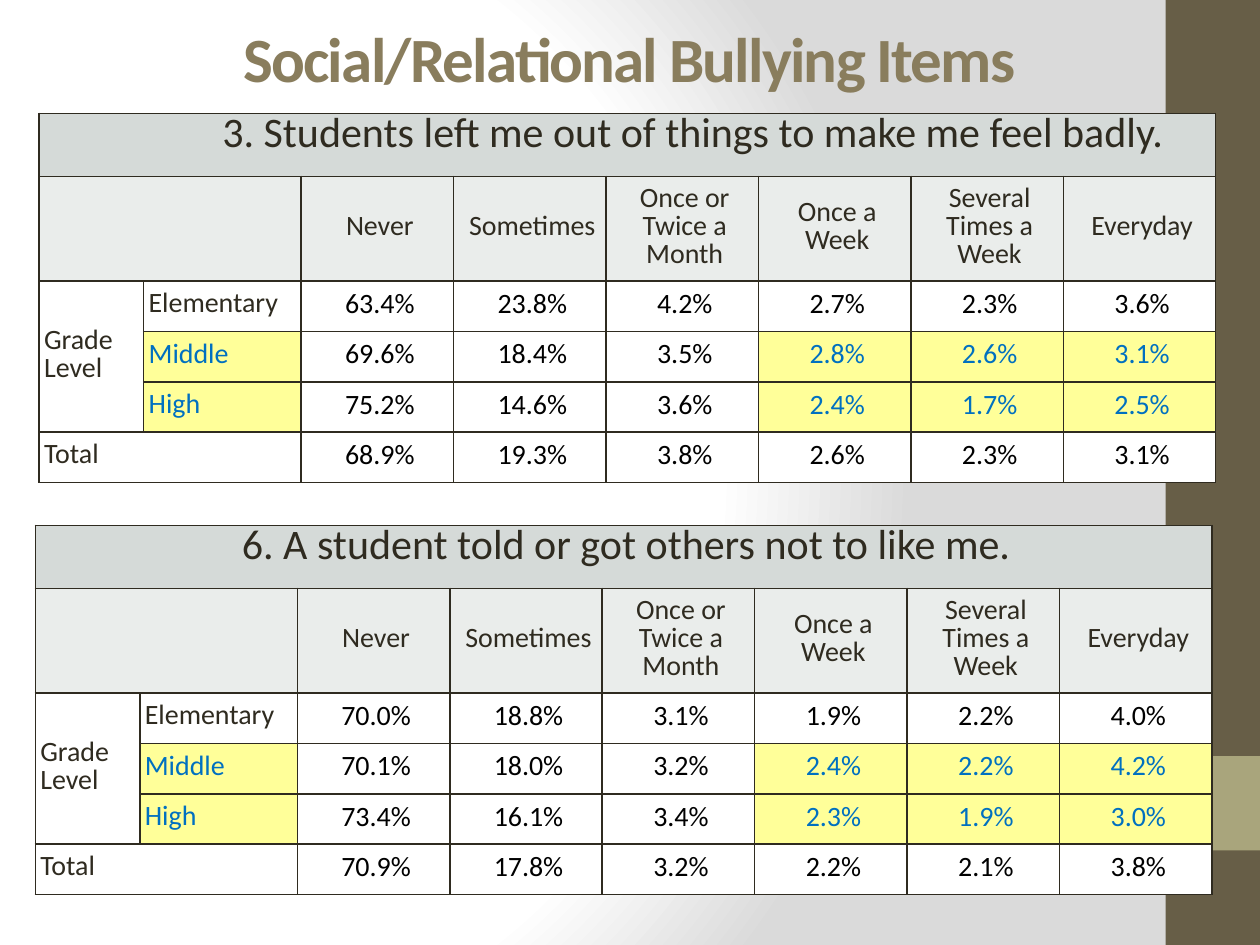
from pptx import Presentation
from pptx.dml.color import RGBColor as RGB
from pptx.enum.shapes import MSO_SHAPE as Shape
from pptx.enum.text import MSO_ANCHOR as Anchor, PP_ALIGN as Align
from pptx.oxml import parse_xml
from pptx.oxml.ns import nsdecls
from pptx.util import Inches, Pt

W, H = 10, 7.5
FONT = "Calibri"
COLS = [0.83, 1.25] + [1.21] * 6
ROWS = [0.5, 0.83] + [0.4] * 4
HEADS = ["Never", "Sometimes", "Once or Twice a Month",
         "Once a Week", "Several Times a Week", "Everyday"]
LEVELS = ["Elementary", "Middle", "High"]
HOT_ROWS, HOT_COLS = (3, 4), (1, 5, 6, 7)

HEX = {
    "ink": "2F2B20", "black": "000000", "blue": "0070C0", "title": "897D5D",
    "white": "FFFFFF", "grey": "DADADA", "band": "D5DAD8", "head": "EAEDEB",
    "hot": "FFFF99", "side": "675E47", "block": "A9A57C",
}

LEFT_OUT = [
    ["63.4%", "23.8%", "4.2%", "2.7%", "2.3%", "3.6%"],
    ["69.6%", "18.4%", "3.5%", "2.8%", "2.6%", "3.1%"],
    ["75.2%", "14.6%", "3.6%", "2.4%", "1.7%", "2.5%"],
    ["68.9%", "19.3%", "3.8%", "2.6%", "2.3%", "3.1%"],
]
NOT_LIKED = [
    ["70.0%", "18.8%", "3.1%", "1.9%", "2.2%", "4.0%"],
    ["70.1%", "18.0%", "3.2%", "2.4%", "2.2%", "4.2%"],
    ["73.4%", "16.1%", "3.4%", "2.3%", "1.9%", "3.0%"],
    ["70.9%", "17.8%", "3.2%", "2.2%", "2.1%", "3.8%"],
]


def write(frame, text, size=16, color="ink", bold=False, align=Align.LEFT,
          indent=0, line=None, track=0):
    """Put one formatted paragraph into a text frame."""
    para = frame.paragraphs[0]
    para.alignment = align
    if line:
        para.line_spacing = Pt(line)
    props = para._p.get_or_add_pPr()
    props.set("marL", str(Inches(indent)))
    props.set("indent", "0")
    run = para.add_run()
    run.text = text
    font = run.font
    font.name, font.size, font.bold = FONT, Pt(size), bold
    font.color.rgb = RGB.from_string(HEX[color])
    if track:
        run._r.get_or_add_rPr().set("spc", str(track * 100))


def paint(slide):
    """Radial gradient background."""
    stops = "".join(
        f'<a:gs pos="{pos * 1000}"><a:srgbClr val="{HEX[name]}"/></a:gs>'
        for pos, name in ((0, "white"), (75, "white"), (100, "grey")))
    slide.element.cSld.insert(0, parse_xml(
        f'<p:bg {nsdecls("p", "a")}><p:bgPr><a:gradFill rotWithShape="1">'
        f'<a:gsLst>{stops}</a:gsLst><a:path path="circle">'
        '<a:fillToRect l="20000" t="50000" r="100000" b="50000"/></a:path>'
        '</a:gradFill><a:effectLst/></p:bgPr></p:bg>'))


def block(slide, top, height, color):
    """Plain rectangle in the right-hand strip."""
    left = 0.925 * W
    box = slide.shapes.add_shape(Shape.RECTANGLE, Inches(left), Inches(top),
                                 Inches(W - left), Inches(height))
    box.shadow.inherit = False
    box.fill.solid()
    box.fill.fore_color.rgb = RGB.from_string(HEX[color])
    box.line.fill.background()


def heading(slide, text):
    title = slide.shapes.title
    title.left, title.top = Inches(1.83), Inches(0.08)
    title.width, title.height = Inches(7.59), Inches(0.1 * H)
    title.text_frame.word_wrap = True
    title.text_frame.vertical_anchor = Anchor.MIDDLE
    write(title.text_frame, text, size=36, color="title", bold=True, track=-1)


def frame_cell(cell, fill, pad):
    """Border, margins and fill of a cell."""
    props = cell._tc.get_or_add_tcPr()
    for side in "LRTB":
        props.append(parse_xml(
            f'<a:ln{side} {nsdecls("a")} w="{Pt(1)}"><a:solidFill>'
            f'<a:srgbClr val="{HEX["ink"]}"/></a:solidFill></a:ln{side}>'))
    cell.fill.solid()
    cell.fill.fore_color.rgb = RGB.from_string(HEX[fill])
    cell.vertical_anchor = Anchor.MIDDLE
    cell.margin_left = cell.margin_right = cell.margin_top = Inches(pad)
    cell.margin_bottom = 0


def survey(slide, left, top, question, values, indent=0.04):
    """Table of answers to one question by grade level."""
    grid = slide.shapes.add_table(
        len(ROWS), len(COLS), Inches(left), Inches(top),
        Inches(sum(COLS)), Inches(sum(ROWS))).table
    grid.first_row = grid.horz_banding = False
    for col, width in zip(grid.columns, COLS):
        col.width = Inches(width)
    for row, height in zip(grid.rows, ROWS):
        row.height = Inches(height)

    # Wording by row, with empty places for merged cells
    words = [[question] + [""] * 7, ["", ""] + HEADS]
    names = [["Grade Level", LEVELS[0]], ["", LEVELS[1]],
             ["", LEVELS[2]], ["Total", ""]]
    words += [name + nums for name, nums in zip(names, values)]

    for r, line in enumerate(words):
        for c, text in enumerate(line):
            cell = grid.cell(r, c)
            hot = r in HOT_ROWS and c in HOT_COLS
            number = r > 1 and c > 1
            fill = "hot" if hot else ("band", "head")[r] if r < 2 else "white"
            frame_cell(cell, fill, 0.01 if number else 0)
            if text:
                write(cell.text_frame, text, size=16 if r else 24,
                      color="blue" if hot else "black" if number else "ink",
                      align=Align.CENTER if r < 2 or number else Align.LEFT,
                      indent=0.04 if r else indent, line=16)

    # Merged areas: question, corner, grade level, total
    for first, last in (((0, 0), (0, 7)), ((1, 0), (1, 1)),
                        ((2, 0), (4, 0)), ((5, 0), (5, 1))):
        grid.cell(*first).merge(grid.cell(*last))


def main():
    deck = Presentation()
    deck.slide_width, deck.slide_height = Inches(W), Inches(H)
    slide = deck.slides.add_slide(deck.slide_layouts[5])
    paint(slide)
    block(slide, 0, H, "side")
    block(slide, 0.8 * H, 0.1 * H, "block")
    heading(slide, "Social/Relational Bullying Items")
    survey(slide, 0.31, 0.9,
           "3. Students left me out of things to make me feel badly.",
           LEFT_OUT, indent=1.04)
    survey(slide, 0.28, 4.17,
           "6. A student told or got others not to like me.", NOT_LIKED)
    deck.save("out.pptx")


if __name__ == "__main__":
    main()
